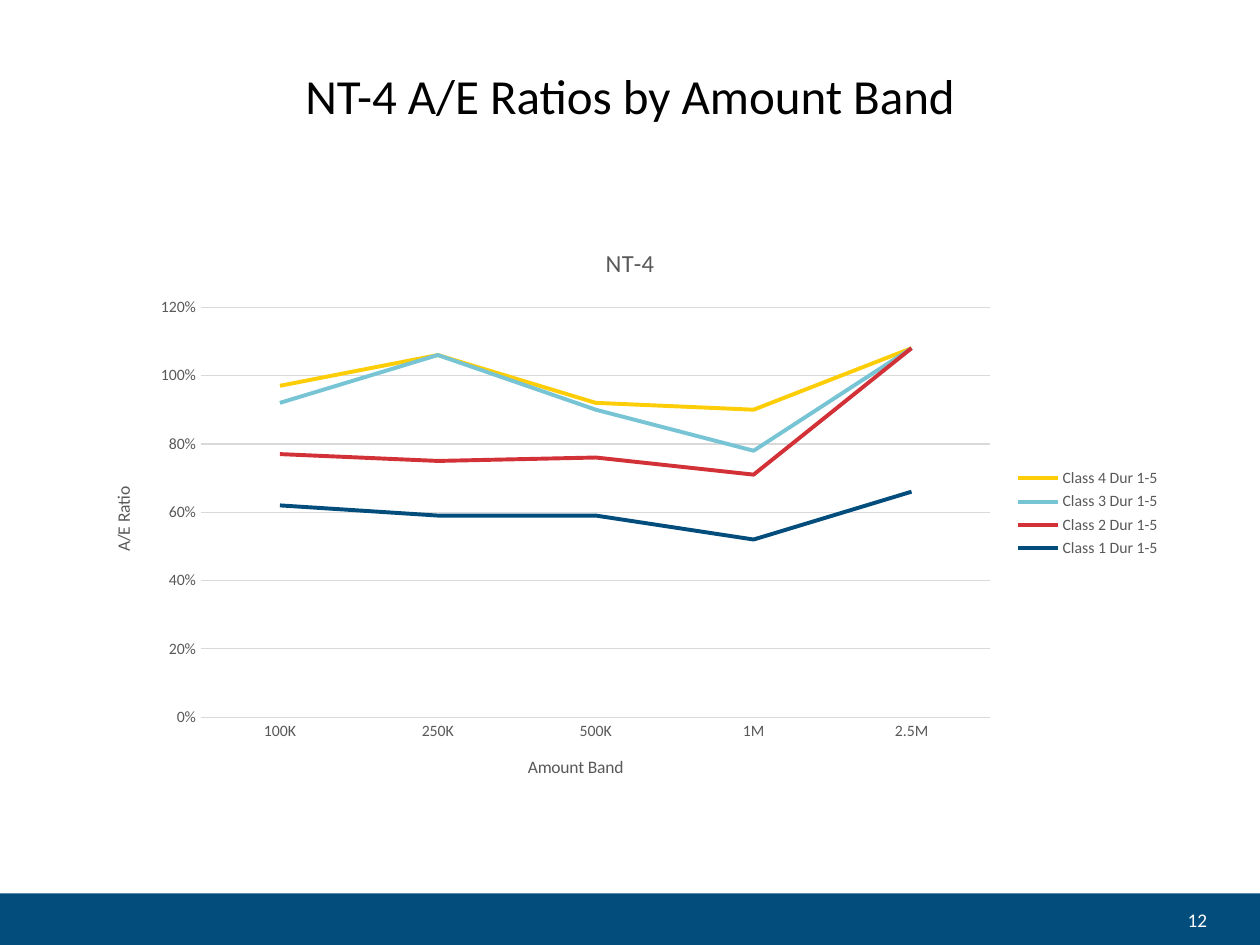
from dataclasses import dataclass

from lxml.etree import SubElement
from pptx import Presentation
from pptx.chart.chart import Chart
from pptx.chart.data import CategoryChartData
from pptx.dml.color import RGBColor
from pptx.enum.chart import XL_CHART_TYPE, XL_LEGEND_POSITION, XL_MARKER_STYLE, XL_TICK_MARK
from pptx.enum.shapes import MSO_SHAPE
from pptx.enum.text import MSO_ANCHOR, PP_ALIGN
from pptx.oxml.ns import qn
from pptx.util import Inches, Pt

FONT = "Calibri"
COLORS = {
    "navy": "024D7C",
    "yellow": "FDCE07",
    "aqua": "77C4D5",
    "red": "D23138",
    "gray": "595959",
    "grid": "D9D9D9",
    "black": "000000",
    "white": "FFFFFF",
}


@dataclass
class RatioLine:
    name: str
    color: str
    ratios: tuple[float, ...]


AMOUNT_BANDS = ("100K", "250K", "500K", "1M", "2.5M")
RATIO_LINES = (
    RatioLine("Class 4 Dur 1-5", "yellow", (0.97, 1.06, 0.92, 0.90, 1.08)),
    RatioLine("Class 3 Dur 1-5", "aqua", (0.92, 1.06, 0.90, 0.78, 1.08)),
    RatioLine("Class 2 Dur 1-5", "red", (0.77, 0.75, 0.76, 0.71, 1.08)),
    RatioLine("Class 1 Dur 1-5", "navy", (0.62, 0.59, 0.59, 0.52, 0.66)),
)


def rgb(color: str) -> RGBColor:
    return RGBColor.from_string(COLORS[color])


def style_font(font, size: float, color: str) -> None:
    font.name = FONT
    font.size = Pt(size)
    font.bold = False
    font.color.rgb = rgb(color)


def style_line(line, width: float, color: str) -> None:
    line.width = Pt(width)
    line.color.rgb = rgb(color)


def set_text(frame, text: str, size: float, color: str, align: PP_ALIGN) -> None:
    frame.text = text
    frame.word_wrap = True
    frame.vertical_anchor = MSO_ANCHOR.MIDDLE
    para = frame.paragraphs[0]
    para.alignment = align
    style_font(para.runs[0].font, size, color)


def set_chart_text(titled, text: str, size: float) -> None:
    """Title a chart or an axis."""
    frame = (titled.chart_title if isinstance(titled, Chart) else titled.axis_title).text_frame
    frame.text = text
    style_font(frame.paragraphs[0].runs[0].font, size, "gray")


def place_plot(chart: Chart, **fractions: float) -> None:
    """Fix the inner plot area as fractions of the chart frame."""
    plot_area = chart._chartSpace.chart.plotArea
    for old_layout in plot_area.findall(qn("c:layout")):
        plot_area.remove(old_layout)
    layout = SubElement(plot_area, qn("c:layout"))
    plot_area.insert(0, layout)
    manual = SubElement(layout, qn("c:manualLayout"))
    settings = {"layoutTarget": "inner", "xMode": "edge", "yMode": "edge", **fractions}
    for tag, value in settings.items():
        SubElement(manual, qn(f"c:{tag}")).set("val", str(value))


def add_ratio_chart(page) -> None:
    data = CategoryChartData(number_format="0%")
    data.categories = AMOUNT_BANDS
    for ratio_line in RATIO_LINES:
        data.add_series(ratio_line.name, ratio_line.ratios)
    chart = page.shapes.add_chart(
        XL_CHART_TYPE.LINE, Inches(0.69), Inches(1.77), Inches(8.62), Inches(4.61), data
    ).chart
    style_font(chart.font, 10, "black")
    set_chart_text(chart, "NT-4", 14)
    place_plot(chart, x=0.105, y=0.145, w=0.727, h=0.706)

    chart.has_legend = True
    chart.legend.position = XL_LEGEND_POSITION.RIGHT
    chart.legend.include_in_layout = False
    style_font(chart.legend.font, 9, "gray")

    bands, ratios = chart.category_axis, chart.value_axis
    for axis, title in ((bands, "Amount Band"), (ratios, "A/E Ratio")):
        set_chart_text(axis, title, 10)
        axis.major_tick_mark = axis.minor_tick_mark = XL_TICK_MARK.NONE
        style_font(axis.tick_labels.font, 9, "gray")
    style_line(bands.format.line, 0.75, "grid")
    ratios.format.line.fill.background()
    style_line(ratios.major_gridlines.format.line, 0.75, "grid")
    ratios.minimum_scale, ratios.maximum_scale, ratios.major_unit = 0, 1.2, 0.2
    ratios.tick_labels.number_format = "0%"
    ratios.tick_labels.number_format_is_linked = False

    plot = chart.plots[0]
    plot.vary_by_categories = False
    for series, ratio_line in zip(plot.series, RATIO_LINES):
        series.smooth = False
        series.marker.style = XL_MARKER_STYLE.NONE
        style_line(series.format.line, 2.25, ratio_line.color)


def main() -> None:
    deck = Presentation()
    deck.slide_width, deck.slide_height = Inches(10), Inches(7.5)
    page = deck.slides.add_slide(deck.slide_layouts[5])

    footer = page.shapes.add_shape(
        MSO_SHAPE.RECTANGLE, Inches(0), Inches(7.09), Inches(10), Inches(0.41)
    )
    footer.shadow.inherit = False
    footer.fill.solid()
    footer.fill.fore_color.rgb = rgb("navy")
    footer.line.fill.background()

    title = page.shapes.title
    title.left, title.top = Inches(0.69), Inches(0.36)
    title.width, title.height = Inches(8.62), Inches(0.85)
    set_text(title.text_frame, "NT-4 A/E Ratios by Amount Band", 28, "black", PP_ALIGN.CENTER)
    title.text_frame.paragraphs[0].line_spacing = 0.9

    add_ratio_chart(page)

    number = page.shapes.add_textbox(Inches(9.01), Inches(7.1), Inches(0.67), Inches(0.4))
    set_text(number.text_frame, "12", 11, "white", PP_ALIGN.RIGHT)

    deck.save("out.pptx")


if __name__ == "__main__":
    main()
